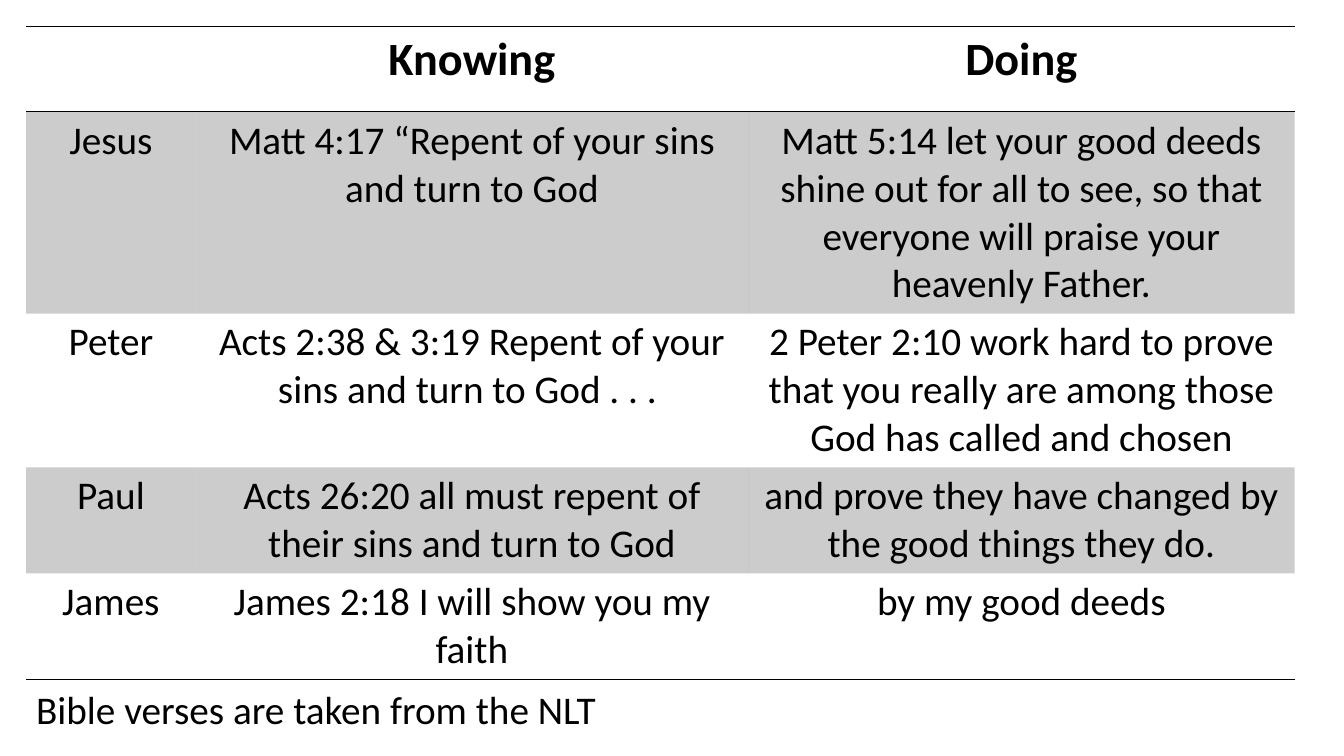
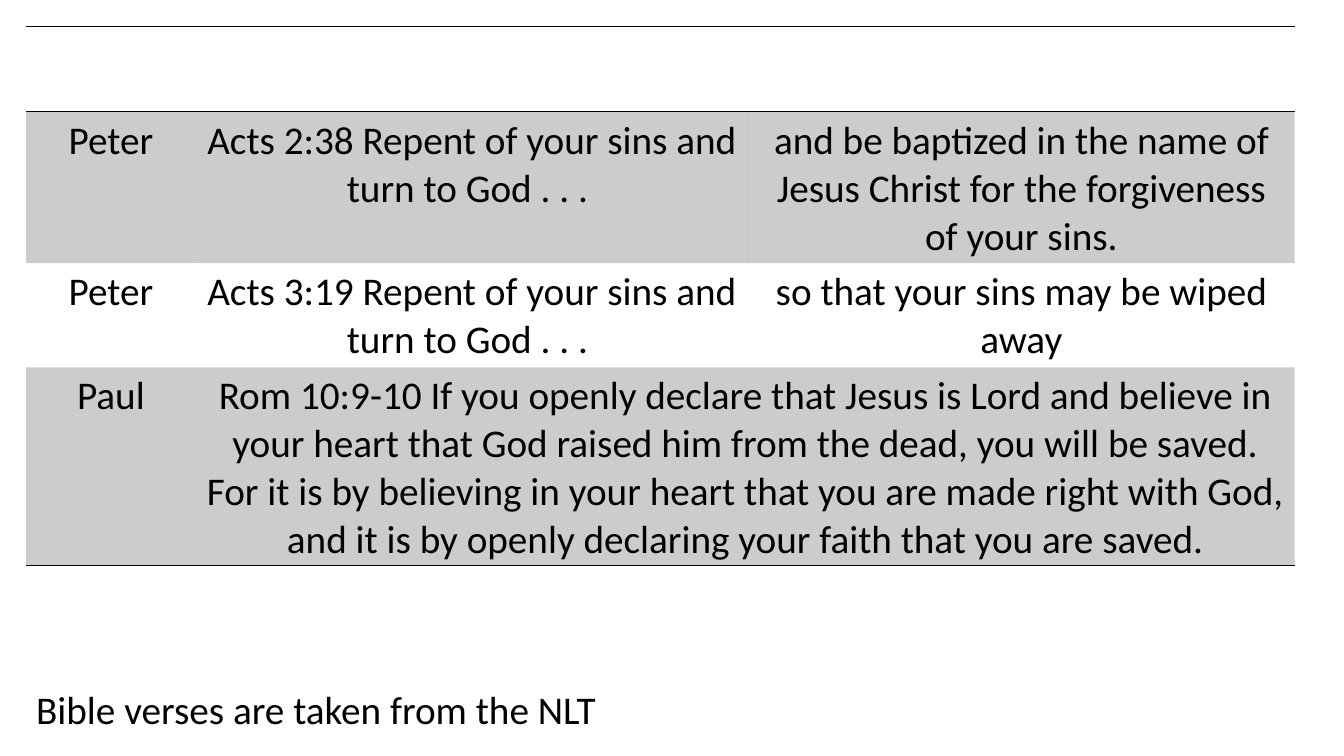
from dataclasses import dataclass

from lxml.etree import SubElement
from pptx import Presentation
from pptx.dml.color import RGBColor
from pptx.enum.text import MSO_AUTO_SIZE, PP_ALIGN
from pptx.oxml.ns import qn
from pptx.util import Inches, Pt

FONT = "Calibri"
BLACK = "000000"
BAND_ALPHA = 20
HEAD_SIZE, BODY_SIZE = 33, 28
LEFT, TOP = 0.26, 0.26
COL_WIDTHS = (1.68, 5.48, 5.42)
HEAD_HEIGHT = 0.85
NO_STYLE = "{2D5ABB26-0587-4C30-8999-92F81FD0307C}"
SOURCE_NOTE = "Bible verses are taken from the NLT"


@dataclass
class Verse:
    speaker: str
    knowing: str
    doing: str | None
    height: float


@dataclass
class VerseTable:
    headings: tuple[str, str, str]
    verses: list[Verse]
    height: float


TABLES = [
    VerseTable(("", "Knowing", "Doing"), [
        Verse("Jesus", "Matt 4:17 “Repent of your sins and turn to God",
              "Matt 5:14 let your good deeds shine out for all to see, "
              "so that everyone will praise your heavenly Father.", 1.02),
        Verse("Peter", "Acts 2:38 & 3:19 Repent of your sins and turn to God . . . ",
              "2 Peter 2:10 work hard to prove that you really are among those "
              "God has called and chosen", 1.5),
        Verse("Paul", "Acts 26:20 all must repent of their sins and turn to God",
              "and prove they have changed by the good things they do.", 1.03),
        Verse("James", "James 2:18 I will show you my faith",
              "by my good deeds", 1.02),
    ], 6.39),
    VerseTable(("", "", ""), [
        Verse("Peter", "Acts 2:38 Repent of your sins and turn to God . . . ",
              "and be baptized in the name of Jesus Christ for the forgiveness "
              "of your sins.", 1.02),
        Verse("Peter", "Acts 3:19 Repent of your sins and turn to God . . . ",
              "so that your sins may be wiped away", 0.96),
        Verse("Paul", "Rom 10:9-10 If you openly declare that Jesus is Lord and "
              "believe in your heart that God raised him from the dead, "
              "you will be saved.\n"
              "For it is by believing in your heart that you are made right with "
              "God, and it is by openly declaring your faith that you are saved.",
              None, 1.03),
    ], 5.35),
]


def rgb(color: str) -> RGBColor:
    return RGBColor.from_string(color)


def set_font(p, size: float, bold: bool = False) -> None:
    p.font.name = FONT
    p.font.size = Pt(size)
    p.font.bold = bold
    p.font.color.rgb = rgb(BLACK)


def add_border(cell, side: str) -> None:
    ln = SubElement(cell._tc.get_or_add_tcPr(), qn(f"a:ln{side}"), w=str(Pt(1)))
    fill = SubElement(ln, qn("a:solidFill"))
    SubElement(fill, qn("a:srgbClr"), val=BLACK)


def fill_cell(cell, banded: bool) -> None:
    if not banded:
        cell.fill.background()
        return
    cell.fill.solid()
    cell.fill.fore_color.rgb = rgb(BLACK)
    clr = cell._tc.tcPr.find(f"{qn('a:solidFill')}/{qn('a:srgbClr')}")
    SubElement(clr, qn("a:alpha"), val=str(BAND_ALPHA * 1000))


def add_verse_table(s, data: VerseTable) -> None:
    rows = [data.headings] + [(v.speaker, v.knowing, v.doing) for v in data.verses]
    heights = [HEAD_HEIGHT] + [v.height for v in data.verses]
    frame = s.shapes.add_table(len(rows), len(COL_WIDTHS), Inches(LEFT), Inches(TOP),
                               Inches(sum(COL_WIDTHS)), Inches(data.height))
    table = frame.table
    table._tbl.tblPr.find(qn("a:tableStyleId")).text = NO_STYLE
    for col, width in zip(table.columns, COL_WIDTHS):
        col.width = Inches(width)
    for i, (row, texts, height) in enumerate(zip(table.rows, rows, heights)):
        row.height = Inches(height)
        sides = "TB" if i == 0 else "B" if i == len(rows) - 1 else ""
        for cell, text in zip(row.cells, texts):
            for side in sides:
                add_border(cell, side)
            fill_cell(cell, i % 2 == 1)
            if text:
                cell.text = text
            for p in cell.text_frame.paragraphs:
                p.alignment = PP_ALIGN.CENTER
                set_font(p, BODY_SIZE if i else HEAD_SIZE, i == 0)
        if texts[2] is None:
            table.cell(i, 1).merge(table.cell(i, 2))
    frame.height = Inches(data.height)


def add_source_note(s) -> None:
    tf = s.shapes.add_textbox(Inches(LEFT), Inches(6.75),
                              Inches(6.17), Inches(0.57)).text_frame
    tf.word_wrap = True
    tf.auto_size = MSO_AUTO_SIZE.SHAPE_TO_FIT_TEXT
    tf.text = SOURCE_NOTE
    set_font(tf.paragraphs[0], BODY_SIZE)


def main() -> None:
    prs = Presentation()
    prs.slide_width, prs.slide_height = Inches(13.33), Inches(7.5)
    for data in TABLES:
        s = prs.slides.add_slide(prs.slide_layouts[6])
        add_verse_table(s, data)
        add_source_note(s)
    prs.save("out.pptx")


if __name__ == "__main__":
    main()
